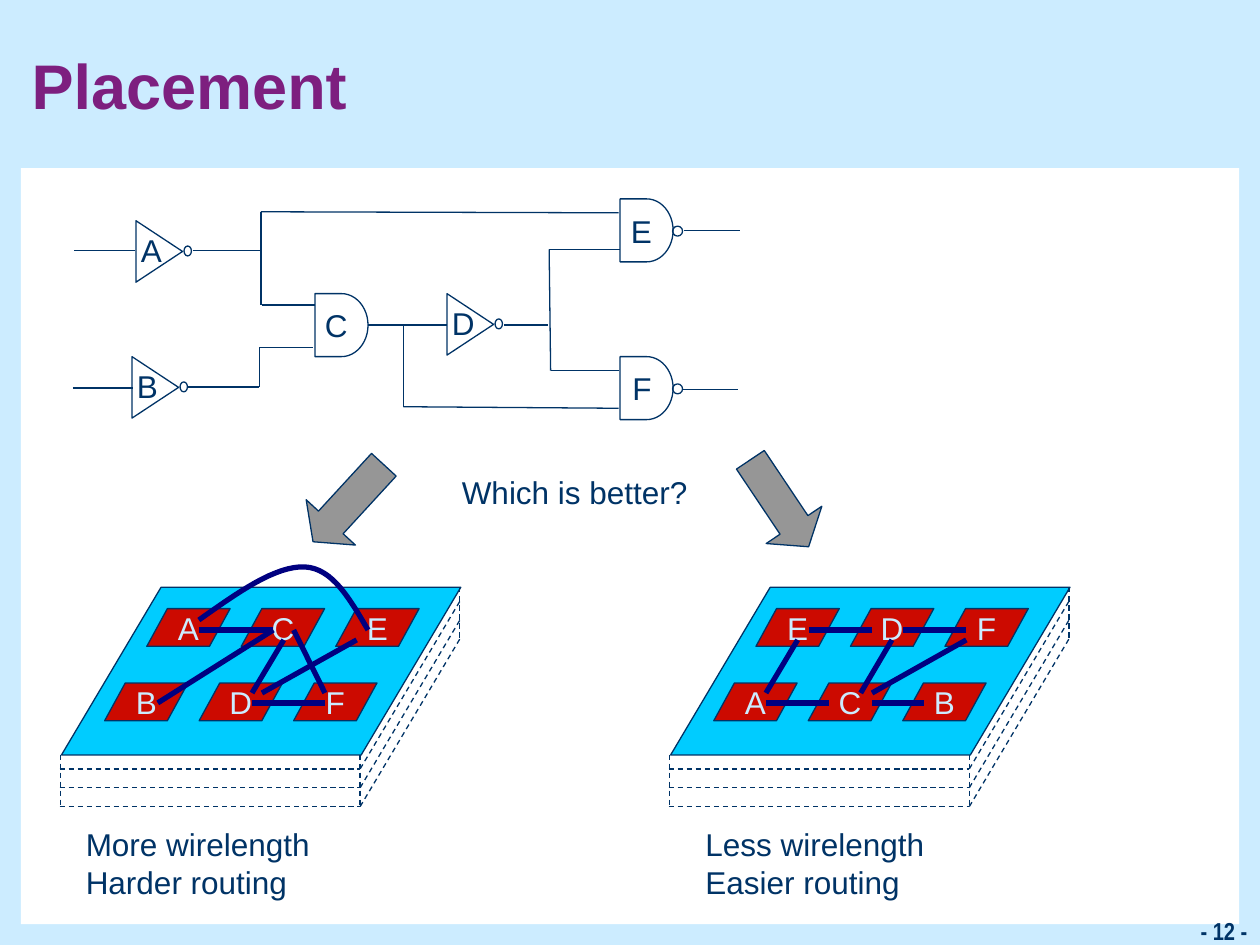
import dataclasses

import pptx
import pptx.dml.color
import pptx.enum.dml
import pptx.enum.shapes
import pptx.enum.text
import pptx.oxml
import pptx.oxml.ns
import pptx.util

Cm = pptx.util.Cm
Pt = pptx.util.Pt
Preset = pptx.enum.shapes.MSO_SHAPE
Align = pptx.enum.text.PP_ALIGN
Anchor = pptx.enum.text.MSO_ANCHOR

RIGHT_BOARD_OFFSET = 12.28


@dataclasses.dataclass(frozen=True)
class Theme:
    background: str = "CCECFF"
    panel: str = "FFFFFF"
    ink: str = "003366"
    title: str = "7D1F7F"
    board: str = "00CCFF"
    tile: str = "CC0A00"
    tile_text: str = "CCECFF"
    arrow: str = "969696"
    net: str = "000080"
    font: str = "Arial"
    number_font: str = "Arial Narrow"
    title_size: int = 36
    body_size: int = 18
    number_size: int = 14
    thin: float = 0.75
    thick: float = 3


def rgb(value):
    return pptx.dml.color.RGBColor.from_string(value)


def cubic_points(start, control_1, control_2, end, steps=16):
    """Sample a cubic Bezier curve, leaving out its start point."""
    points = []
    for step in range(1, steps + 1):
        t = step / steps
        weights = ((1 - t) ** 3, 3 * t * (1 - t) ** 2, 3 * t * t * (1 - t), t ** 3)
        corners = (start, control_1, control_2, end)
        points.append(tuple(sum(w * c[axis] for w, c in zip(weights, corners))
                            for axis in (0, 1)))
    return points


class SlideBuilder:
    """Draws themed elements on one slide; all lengths are in centimetres."""

    def __init__(self, slide, theme):
        self.slide = slide
        self.theme = theme
        background = slide.background.fill
        background.solid()
        background.fore_color.rgb = rgb(theme.background)

    def format_text(self, text_frame, color=None, size=None, font=None,
                    bold=False, align=Align.LEFT):
        for paragraph in text_frame.paragraphs:
            paragraph.alignment = align
            for run in paragraph.runs:
                run.font.name = font or self.theme.font
                run.font.size = Pt(size or self.theme.body_size)
                run.font.bold = bold
                run.font.color.rgb = rgb(color or self.theme.ink)

    def title(self, text, left, top, width, height):
        shape = self.slide.shapes.title
        shape.left, shape.top, shape.width, shape.height = map(
            Cm, (left, top, width, height))
        frame = shape.text_frame
        frame.text = text
        frame.margin_left = frame.margin_right = 0
        frame.margin_top = frame.margin_bottom = 0
        frame.vertical_anchor = Anchor.MIDDLE
        frame.auto_size = pptx.enum.text.MSO_AUTO_SIZE.NONE
        frame.paragraphs[0].line_spacing = 0.87
        self.format_text(frame, self.theme.title, self.theme.title_size, bold=True)

    def text(self, text, left, top, width, height=1.02, **style):
        box = self.slide.shapes.add_textbox(*map(Cm, (left, top, width, height)))
        box.text_frame.text = text
        box.text_frame.word_wrap = False
        self.format_text(box.text_frame, **style)

    def shape(self, preset, left, top, width, height, fill=None, outlined=True,
              rotation=0, adjustments=()):
        shape = self.slide.shapes.add_shape(
            preset, *map(Cm, (left, top, width, height)))
        shape.shadow.inherit = False
        shape.rotation = rotation
        for index, value in enumerate(adjustments):
            shape.adjustments[index] = value
        if fill:
            shape.fill.solid()
            shape.fill.fore_color.rgb = rgb(fill)
        else:
            shape.fill.background()
        if outlined:
            shape.line.color.rgb = rgb(self.theme.ink)
            shape.line.width = Pt(self.theme.thin)
        else:
            shape.line.fill.background()
        return shape

    def line(self, x1, y1, x2, y2, color=None, width=None, dashed=False):
        connector = self.slide.shapes.add_connector(
            pptx.enum.shapes.MSO_CONNECTOR.STRAIGHT, *map(Cm, (x1, y1, x2, y2)))
        connector.line.color.rgb = rgb(color or self.theme.ink)
        connector.line.width = Pt(width or self.theme.thin)
        if dashed:
            connector.line.dash_style = pptx.enum.dml.MSO_LINE.DASH
        properties = connector._element.find(pptx.oxml.ns.qn("p:spPr"))
        properties.append(pptx.oxml.parse_xml(
            "<a:effectLst %s/>" % pptx.oxml.ns.nsdecls("a")))

    def net(self, x1, y1, x2, y2):
        self.line(x1, y1, x2, y2, self.theme.net, self.theme.thick)

    def curved_net(self, start, *segments):
        """Draw a curve; each segment holds two control points and an end."""
        points = [start]
        for segment in segments:
            points += cubic_points(points[-1], *segment)
        first, *rest = [(Cm(x), Cm(y)) for x, y in points]
        builder = self.slide.shapes.build_freeform(*first)
        builder.add_line_segments(rest, close=False)
        curve = builder.convert_to_shape()
        curve.shadow.inherit = False
        curve.fill.background()
        curve.line.color.rgb = rgb(self.theme.net)
        curve.line.width = Pt(self.theme.thick)

    def gate(self, name, left, top, label_shift, inverted):
        self.shape(Preset.FLOWCHART_DELAY, left, top, 1.07, 1.27)
        if inverted:
            self.shape(Preset.OVAL, left + 1.06, top + 0.55, 0.2, 0.2)
        self.text(name, left + label_shift, top + 0.13, 0.95)

    def inverter(self, name, left, top):
        self.shape(Preset.ISOSCELES_TRIANGLE, left, top, 1.24, 0.94, rotation=90)
        self.shape(Preset.OVAL, left + 1.12, top + 0.36, 0.15, 0.2)
        self.text(name, left, top - 0.07, 1.14)

    def board(self, offset, top_row, bottom_row):
        """Draw a layered board with two rows of named tiles."""
        self.shape(Preset.PARALLELOGRAM, 1.24 + offset, 11.84, 8.05, 3.38,
                   self.theme.board, adjustments=[0.594])
        edges = [(1.22, 15.21, 1.22, 16.28), (7.26, 15.21, 7.26, 16.28),
                 (9.27, 11.84, 9.27, 12.88)]
        for layer in range(3):
            drop = 0.38 * layer
            edges.append((1.2, 15.5 + drop, 7.26, 15.5 + drop))
            edges.append((7.26, 15.5 + drop, 9.3, 12.07 + drop))
        for x1, y1, x2, y2 in edges:
            self.line(x1 + offset, y1, x2 + offset, y2, dashed=True)
        for names, left, top in ((bottom_row, 2.11, 13.77), (top_row, 2.96, 12.27)):
            for column, name in enumerate(names):
                self.tile(name, left + offset + 1.905 * column, top)

    def tile(self, name, left, top):
        shape = self.shape(Preset.PARALLELOGRAM, left, top, 1.68, 0.76,
                           self.theme.tile, adjustments=[0.547])
        shape.text_frame.text = name
        shape.text_frame.word_wrap = False
        shape.text_frame.vertical_anchor = Anchor.MIDDLE
        self.format_text(shape.text_frame, self.theme.tile_text, align=Align.CENTER)


WIRES = [
    (1.5, 5.05, 2.72, 5.05), (1.47, 7.82, 2.69, 7.82),
    (3.89, 5.05, 5.26, 5.05), (3.78, 7.8, 5.23, 7.8),
    (6.35, 6.15, 5.28, 6.15), (6.3, 7, 5.25, 7),
    (5.26, 5.05, 5.26, 6.15), (5.23, 7, 5.23, 7.8),
    (5.26, 5.05, 5.26, 4.27), (12.47, 4.29, 5.26, 4.27),
    (7.42, 6.55, 9.02, 6.55), (10.16, 6.55, 11.05, 6.55),
    (12.5, 5.03, 11.07, 5.03), (12.47, 7.47, 11.1, 7.47),
    (11.07, 5.03, 11.1, 7.47), (8.13, 6.57, 8.13, 8.2),
    (12.47, 8.23, 8.13, 8.2),
    (13.79, 4.65, 14.91, 4.65), (13.77, 7.85, 14.88, 7.85),
]
NETS = [
    (4.01, 12.7, 5.51, 12.7), (3.18, 14.17, 5.51, 12.7),
    (5.92, 12.7, 6.55, 13.97), (5.72, 12.9, 5.08, 13.97),
    (7.19, 12.9, 5.28, 13.97), (5.08, 14.17, 6.55, 14.17),
    (16.08, 12.9, 15.44, 13.97), (17.98, 12.9, 17.35, 13.97),
    (15.44, 14.17, 16.71, 14.17), (16.31, 12.7, 17.58, 12.7),
    (19.48, 12.9, 17.58, 13.97), (18.21, 12.7, 19.48, 12.7),
    (17.58, 14.17, 18.62, 14.17),
]


def main():
    presentation = pptx.Presentation()
    presentation.slide_width, presentation.slide_height = Cm(25.4), Cm(19.05)
    theme = Theme()
    builder = SlideBuilder(
        presentation.slides.add_slide(presentation.slide_layouts[5]), theme)

    builder.shape(Preset.RECTANGLE, 0.42, 3.39, 24.56, 15.24, theme.panel, outlined=False)
    builder.text("- 12 -", 21.56, 18.34, 3.84, 0.76, size=theme.number_size,
                 font=theme.number_font, bold=True, align=Align.RIGHT)
    builder.title("Placement", 0.64, 0.43, 23.88, 2.74)

    builder.gate("C", 6.35, 5.92, -0.05, inverted=False)
    builder.gate("E", 12.5, 4.01, -0.03, inverted=True)
    builder.gate("F", 12.5, 7.19, 0, inverted=True)
    for name, left, top in (("A", 2.59, 4.6), ("B", 2.51, 7.34), ("D", 8.86, 6.07)):
        builder.inverter(name, left, top)
    for wire in WIRES:
        builder.line(*wire)

    for left, rotation in ((6.35, 42.6), (15.04, 326.2)):
        builder.shape(Preset.DOWN_ARROW, left, 9.09, 1.35, 2.11, theme.arrow,
                      rotation=rotation, adjustments=[0.5, 0.392])
    builder.text("Which is better?", 9.06, 9.42, 5.4)

    builder.board(0, "ACE", "BDF")
    builder.board(RIGHT_BOARD_OFFSET, "EDF", "ACB")
    builder.curved_net((4.01, 12.5),
                       ((4.8, 11.94), (5.56, 11.4), (6.15, 11.43)),
                       ((6.71, 11.46), (7.06, 12.09), (7.42, 12.7)))
    for net in NETS:
        builder.net(*net)

    builder.text("More wirelength\nHarder routing", 1.48, 16.51, 5.2, 1.78)
    builder.text("Less wirelength\nEasier routing", 13.97, 16.51, 5.2, 1.78)
    presentation.save("out.pptx")


if __name__ == "__main__":
    main()
